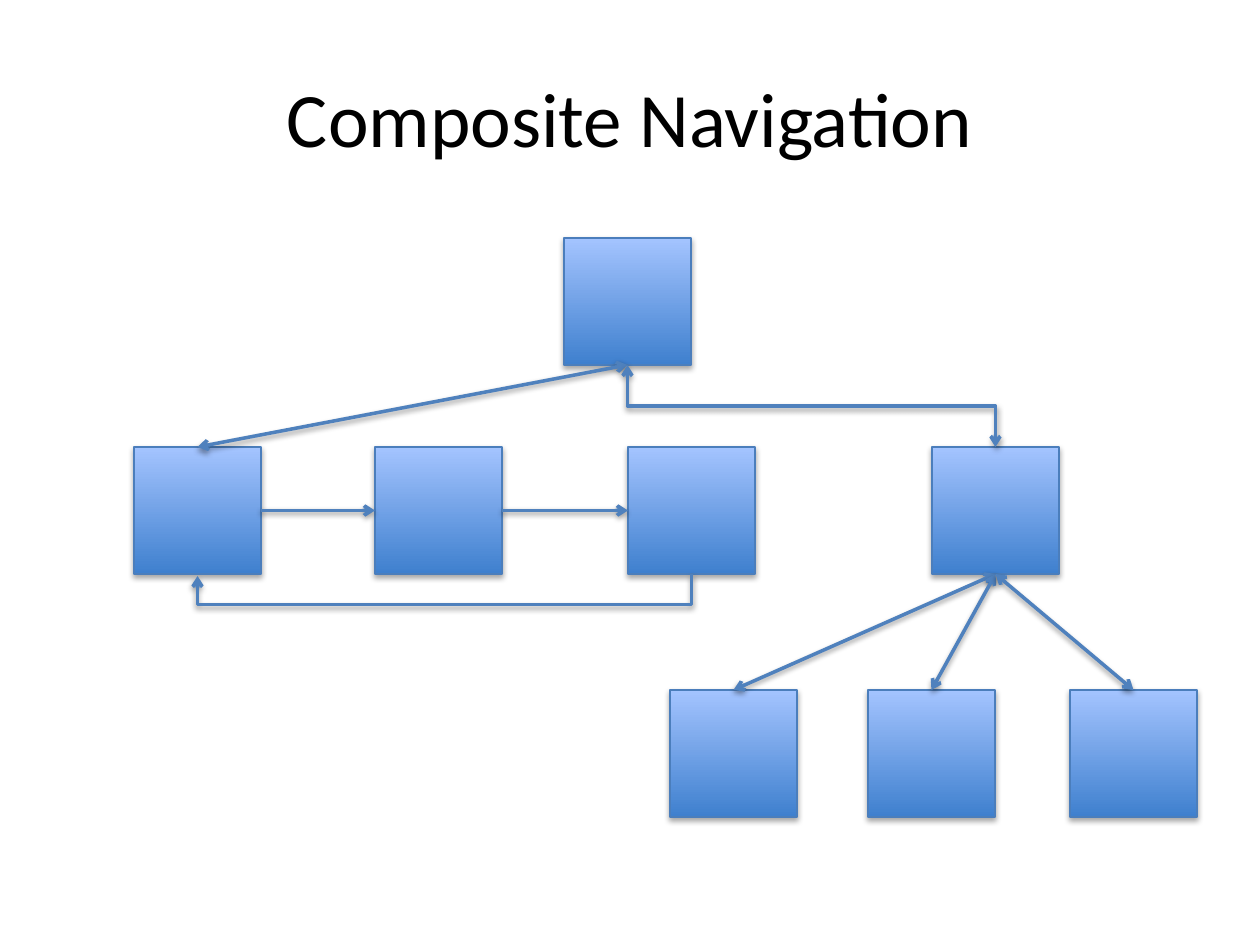
from pptx import Presentation
from pptx.dml.color import RGBColor
from pptx.enum.shapes import MSO_CONNECTOR as Link, MSO_SHAPE as Shape
from pptx.enum.text import MSO_ANCHOR, PP_ALIGN
from pptx.oxml.ns import qn
from pptx.util import Pt
from lxml.etree import SubElement

EMU_PER_PX = 914400 / 126
COLORS = {"low": "3F80CE", "high": "A4C4FF", "edge": "4B7EBC",
          "arrow": "4F81BD", "title": "000000"}
NODE = 127
TOP, LEFT, BOTTOM, RIGHT = range(4)  # connection sites of a rectangle


def px(value):
    return round(value * EMU_PER_PX)


def color(name):
    return RGBColor.from_string(COLORS[name])


def add_title(page, text, left, top, width, height):
    title = page.shapes.title
    title.left, title.top = px(left), px(top)
    title.width, title.height = px(width), px(height)
    frame = title.text_frame
    frame.text = text
    frame.vertical_anchor = MSO_ANCHOR.MIDDLE
    para = frame.paragraphs[0]
    para.alignment = PP_ALIGN.CENTER
    para.font.name, para.font.size = "Calibri", Pt(44)
    para.font.color.rgb = color("title")


def add_node(page, left, top):
    """Square with a vertical gradient; its soft shadow comes from the theme."""
    node = page.shapes.add_shape(Shape.RECTANGLE, px(left), px(top), px(NODE), px(NODE))
    node.fill.gradient()
    node.fill.gradient_angle = 90
    for stop, name in zip(node.fill.gradient_stops, ("low", "high")):
        stop.color.rgb = color(name)
    node.line.color.rgb = color("edge")
    node.line.width = Pt(0.75)
    return node


def style_arrow(line, both_ways):
    line.line.color.rgb = color("arrow")
    line.line.width = Pt(2)
    outline = line.line._get_or_add_ln()
    for end in ("headEnd", "tailEnd") if both_ways else ("tailEnd",):
        SubElement(outline, qn(f"a:{end}"), type="arrow")


def link(page, start, start_site, end, end_site, both_ways=False):
    line = page.shapes.add_connector(Link.STRAIGHT, 0, 0, 0, 0)
    line.begin_connect(start, start_site)
    line.end_connect(end, end_site)
    style_arrow(line, both_ways)


def link_bent(page, start, end, bend, both_ways=False):
    """Elbow that leaves start downwards and turns at the height bend."""
    (x1, y1), (x2, y2) = start, end
    width, height = y2 - y1, abs(x2 - x1)  # before the quarter turn
    left, top = (x1 + x2 - width) / 2, (y1 + y2 - height) / 2
    line = page.shapes.add_connector(Link.ELBOW, px(left), px(top),
                                     px(left + width), px(top + height))
    frame = line._element.spPr.find(qn("a:xfrm"))
    frame.set("rot", str((90 if x2 < x1 else 270) * 60000))
    if x2 > x1:
        frame.set("flipH", "1")
    guides = line._element.spPr.find(qn("a:prstGeom")).get_or_add_avLst()
    turn = round((bend - y1) / width * 100000)
    SubElement(guides, qn("a:gd"), name="adj1", fmla=f"val {turn}")
    style_arrow(line, both_ways)


def add_cycle(page, left, top):
    """Row of pages visited in order, with a way back to the first."""
    offsets = (0, 241, 494)
    nodes = [add_node(page, left + offset, top) for offset in offsets]
    for node, following in zip(nodes, nodes[1:]):
        link(page, node, RIGHT, following, LEFT)
    middle, bottom = left + NODE / 2, top + NODE
    link_bent(page, (middle + offsets[-1], bottom), (middle, bottom + 2), bottom + 31)
    return nodes[0]


def add_tree(page, left, top):
    """Parent page above three children."""
    parent = add_node(page, left + 262, top)
    for offset in (0, 198, 400):
        child = add_node(page, left + offset, top + 243)
        link(page, parent, BOTTOM, child, TOP, both_ways=True)


def main():
    deck = Presentation()
    deck.slide_width, deck.slide_height = px(1260), px(945)
    page = deck.slides.add_slide(deck.slide_layouts[5])
    add_title(page, "Composite Navigation", 63, 38, 1134, 158)
    root_left, root_top = 564, 238
    tree_left, row_top = 670, 447
    root = add_node(page, root_left, root_top)
    first = add_cycle(page, 134, row_top)
    link(page, root, BOTTOM, first, TOP, both_ways=True)
    add_tree(page, tree_left, row_top)
    root_bottom = root_top + NODE
    link_bent(page, (root_left + NODE / 2, root_bottom),
              (tree_left + 262 + NODE / 2, row_top),
              (root_bottom + row_top) / 2, both_ways=True)
    deck.save("out.pptx")


if __name__ == "__main__":
    main()
